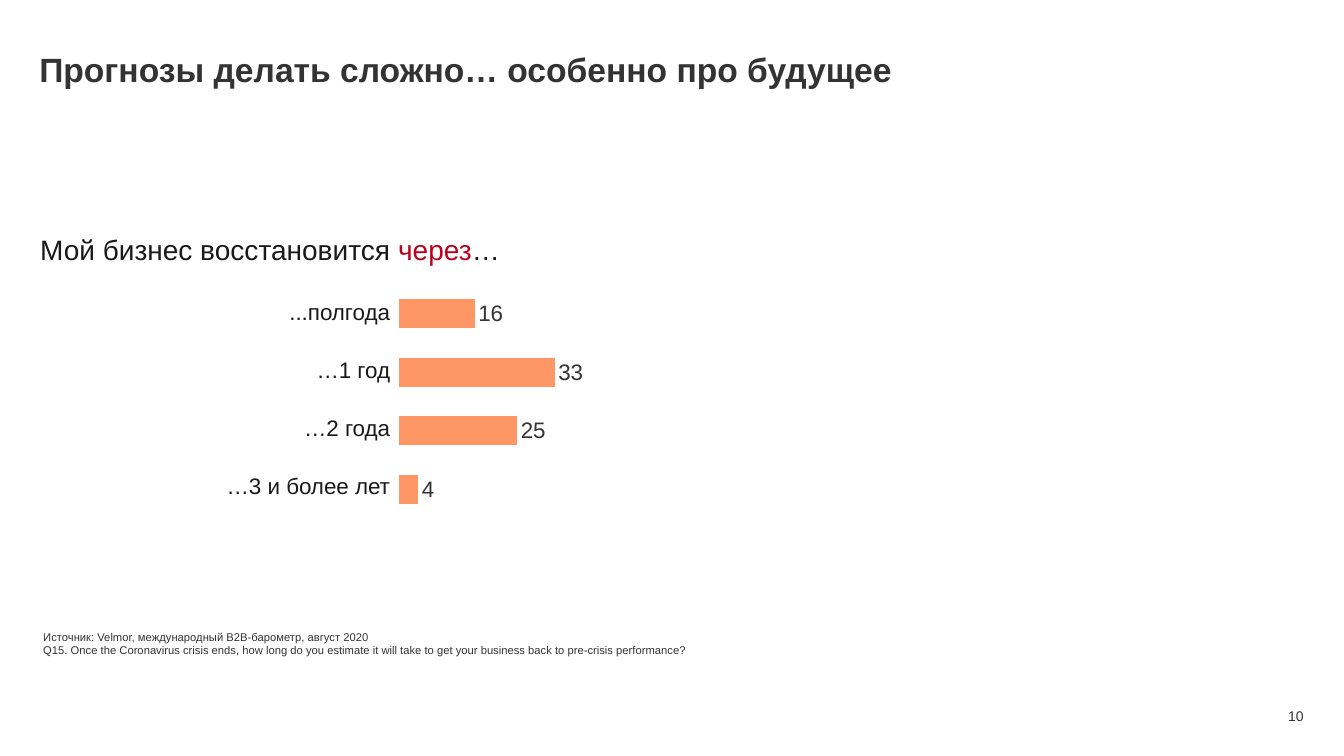
from dataclasses import dataclass

from lxml import etree
from pptx import Presentation
from pptx.chart.data import CategoryChartData
from pptx.dml.color import RGBColor
from pptx.enum.chart import XL_CHART_TYPE, XL_LABEL_POSITION
from pptx.enum.text import MSO_ANCHOR, PP_ALIGN
from pptx.oxml.ns import qn
from pptx.util import Inches, Pt

BAR = XL_CHART_TYPE.BAR_CLUSTERED
OUTSIDE = XL_LABEL_POSITION.OUTSIDE_END
TOP, MIDDLE = MSO_ANCHOR.TOP, MSO_ANCHOR.MIDDLE
LEFT, RIGHT = PP_ALIGN.LEFT, PP_ALIGN.RIGHT


@dataclass(frozen=True)
class Theme:
    """Font, colours and type sizes of the slide."""
    font: str = "Arial"
    dark: str = "333333"
    ink: str = "1A1A1A"
    accent: str = "BB001E"
    bar: str = "FF9666"
    title: int = 24
    heading: int = 20
    label: int = 16
    page: int = 10
    source: int = 8


class SlideBuilder:
    """Places styled elements on a slide, with lengths in percent of its size."""

    def __init__(self, presentation, theme):
        self.theme = theme
        self.width = presentation.slide_width
        self.height = presentation.slide_height
        self.slide = presentation.slides.add_slide(presentation.slide_layouts[6])

    def area(self, left, top, width, height):
        """Turn percentages into slide lengths."""
        return (int(self.width * left / 100), int(self.height * top / 100),
                int(self.width * width / 100), int(self.height * height / 100))

    def style(self, font, size, color, bold=False):
        """Set the face, size, colour and weight of a font."""
        font.name = self.theme.font
        font.size = Pt(size)
        font.bold = bold
        font.color.rgb = RGBColor.from_string(color)

    def text(self, area, lines, size, color, bold=False, align=LEFT,
             anchor=TOP, padded=False):
        """Add a text box; each line is a list of (text, colour or None) runs."""
        frame = self.slide.shapes.add_textbox(*self.area(*area)).text_frame
        frame.word_wrap = True
        frame.vertical_anchor = anchor
        if not padded:
            frame.margin_left = frame.margin_right = 0
            frame.margin_top = frame.margin_bottom = 0
        for index, line in enumerate(lines):
            paragraph = frame.add_paragraph() if index else frame.paragraphs[0]
            paragraph.alignment = align
            self.style(paragraph.font, size, color, bold)
            for words, run_color in line:
                run = paragraph.add_run()
                run.text = words
                if run_color:
                    run.font.color.rgb = RGBColor.from_string(run_color)

    def label_table(self, area, labels):
        """Add a one-column table of right-aligned labels."""
        table = self.slide.shapes.add_table(len(labels), 1, *self.area(*area)).table
        table.first_row = table.horz_banding = False
        for row, label in enumerate(labels):
            cell = table.cell(row, 0)
            cell.fill.background()
            cell.margin_left = cell.margin_right = 0
            cell.margin_top = cell.margin_bottom = 0
            cell.vertical_anchor = MIDDLE
            cell.text = label
            paragraph = cell.text_frame.paragraphs[0]
            paragraph.alignment = RIGHT
            self.style(paragraph.font, self.theme.label, self.theme.ink)

    def bar_chart(self, area, values, maximum, gap, plot_area):
        """Add a bar chart without axes, with a value beside each bar."""
        data = CategoryChartData(number_format="0")
        data.categories = [str(number + 1) for number in range(len(values))]
        data.add_series("Series 1", values)
        chart = self.slide.shapes.add_chart(BAR, *self.area(*area), data).chart
        self.style(chart.font, self.theme.page, self.theme.dark)
        chart.has_legend = chart.has_title = False
        chart.category_axis.reverse_order = True
        chart.category_axis.visible = False
        chart.value_axis.visible = False
        chart.value_axis.has_major_gridlines = False
        chart.value_axis.minimum_scale = 0
        chart.value_axis.maximum_scale = maximum

        plot = chart.plots[0]
        plot.gap_width = gap
        plot.vary_by_categories = False
        fill = plot.series[0].format.fill
        fill.solid()
        fill.fore_color.rgb = RGBColor.from_string(self.theme.bar)
        plot.has_data_labels = True
        labels = plot.data_labels
        labels.show_value = True
        labels.position = OUTSIDE
        labels.number_format = "0"
        labels.number_format_is_linked = False
        self.style(labels.font, self.theme.label, self.theme.dark)
        self.place_plot(chart, plot_area)

    def place_plot(self, chart, plot_area):
        """Fix the inner plot area as shares of the chart."""
        plot_element = chart.element.find(".//" + qn("c:plotArea"))
        layout = plot_element.find(qn("c:layout"))
        if layout is None:
            layout = etree.Element(qn("c:layout"))
            plot_element.insert(0, layout)
        manual = etree.SubElement(layout, qn("c:manualLayout"))
        settings = [("layoutTarget", "inner"), ("xMode", "edge"), ("yMode", "edge")]
        settings += zip("xywh", plot_area)
        for name, value in settings:
            etree.SubElement(manual, qn("c:" + name)).set("val", str(value))


def main():
    """Build the forecast slide."""
    presentation = Presentation()
    presentation.slide_width = Inches(13.33)
    presentation.slide_height = Inches(7.5)
    theme = Theme()
    builder = SlideBuilder(presentation, theme)

    builder.bar_chart((29.03, 35.87, 16.8, 34.53), (16, 33, 25, 4), maximum=35,
                      gap=102, plot_area=(0.04, 0.05, 0.73, 0.9))
    builder.label_table((9, 37.6, 20.03, 30.67),
                        ("...полгода", "…1 год", "…2 года", "…3 и более лет"))
    builder.text((2.93, 6.27, 94.07, 5.87),
                 [[("Прогнозы делать сложно… особенно про будущее", None)]],
                 theme.title, theme.dark, bold=True, anchor=MIDDLE)
    builder.text((89.05, 93.2, 7.95, 2.93), [[("10", None)]],
                 theme.page, theme.dark, align=RIGHT, anchor=MIDDLE)
    builder.text((2.25, 30.13, 36.76, 5.87),
                 [[("Мой бизнес восстановится ", None), ("через", theme.accent),
                   ("…", None)]],
                 theme.heading, theme.ink, padded=True)
    builder.text((2.48, 82.67, 62.79, 4.93),
                 [[("Источник: Velmor, международный B2B-барометр, август 2020", None)],
                  [("Q15. Once the Coronavirus crisis ends, how long do you estimate "
                    "it will take to get your business back to pre-crisis performance?",
                    None)]],
                 theme.source, theme.dark, padded=True)
    presentation.save("out.pptx")


if __name__ == "__main__":
    main()
